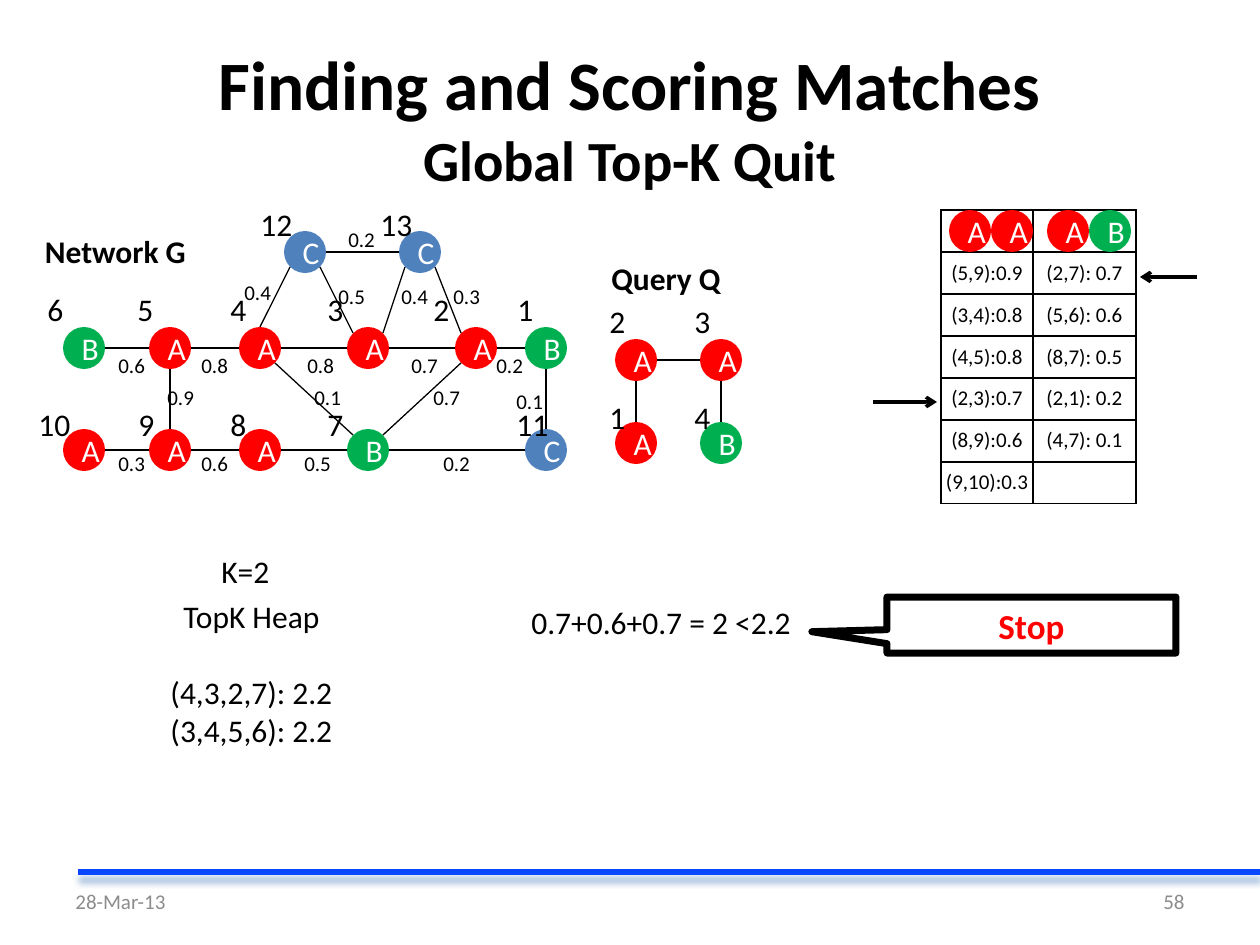
from lxml.etree import SubElement
from pptx import Presentation
from pptx.dml.color import RGBColor
from pptx.enum.shapes import MSO_CONNECTOR, MSO_SHAPE
from pptx.enum.text import MSO_ANCHOR, PP_ALIGN
from pptx.oxml.ns import qn
from pptx.util import Emu, Pt

PX = 914400 / 126
DIAMETER = 42
COLORS = {"black": "000000", "white": "FFFFFF", "grey": "8C8C8C", "stop": "FF0000",
          "rule": "0846FF", "rule_shadow": "95B3D7",
          "A": "FF0000", "B": "00B050", "C": "4F81BD"}
CENTER, RIGHT = PP_ALIGN.CENTER, PP_ALIGN.RIGHT
MARGINS = ("margin_left", "margin_top", "margin_right", "margin_bottom")

# Where a line may touch a node, as offsets from its centre.
SITES = {"N": (0, -21), "S": (0, 21), "W": (-21, 0), "E": (21, 0),
         "NW": (-15, -15), "NE": (15, -15), "SW": (-15, 15), "SE": (15, 15)}

# Node: letter, centre x, centre y, label x, label y.
NETWORK_NODES = {
    "12": ("C", 285, 53, 228, 0), "13": ("C", 400, 53, 348, 0),
    "6": ("B", 64, 149, 15, 85), "5": ("A", 150, 149, 105, 85),
    "4": ("A", 240, 149, 198, 85), "3": ("A", 348, 149, 295, 85),
    "2": ("A", 456, 149, 401, 85), "1": ("B", 526, 149, 485, 85),
    "10": ("A", 64, 251, 6, 200), "9": ("A", 150, 251, 106, 200),
    "8": ("A", 240, 251, 198, 200), "7": ("B", 348, 251, 295, 200),
    "11": ("C", 526, 251, 484, 200),
}
# Edge: node, site, node, site, weight, weight x, weight y.
NETWORK_EDGES = [
    ("12", "E", "13", "W", "0.2", 316, 21),
    ("12", "SW", "4", "N", "0.4", 212, 74),
    ("12", "SE", "3", "NW", "0.5", 306, 78),
    ("13", "SW", "3", "NE", "0.4", 369, 78),
    ("13", "SE", "2", "NW", "0.3", 421, 78),
    ("6", "E", "5", "W", "0.6", 86, 147),
    ("5", "E", "4", "W", "0.8", 169, 147),
    ("4", "E", "3", "W", "0.8", 275, 147),
    ("3", "E", "2", "W", "0.7", 379, 147),
    ("2", "E", "1", "W", "0.2", 464, 147),
    ("5", "S", "9", "N", "0.9", 135, 179),
    ("4", "SE", "7", "NW", "0.1", 282, 179),
    ("2", "SW", "7", "NE", "0.7", 401, 179),
    ("1", "S", "11", "N", "0.1", 484, 183),
    ("10", "E", "9", "W", "0.3", 86, 245),
    ("9", "E", "8", "W", "0.6", 169, 245),
    ("8", "E", "7", "W", "0.5", 272, 245),
    ("7", "E", "11", "W", "0.2", 411, 245),
]
QUERY_NODES = {
    "2": ("A", 39, 107, 0, 43), "3": ("A", 124, 107, 85, 43),
    "1": ("A", 39, 190, 0, 139), "4": ("B", 124, 190, 85, 139),
}
QUERY_EDGES = [("2", "E", "3", "W", None, 0, 0), ("2", "S", "1", "N", None, 0, 0),
               ("3", "S", "4", "N", None, 0, 0)]
PAIR_SCORES = [("(5,9):0.9", "(2,7): 0.7"), ("(3,4):0.8", "(5,6): 0.6"),
               ("(4,5):0.8", "(8,7): 0.5"), ("(2,3):0.7", "(2,1): 0.2"),
               ("(8,9):0.6", "(4,7): 0.1"), ("(9,10):0.3", "")]


def px(*lengths):
    return [Emu(round(length * PX)) for length in lengths]


def rgb(name):
    return RGBColor.from_string(COLORS[name])


def write(paragraph, text, size, color="black", bold=False, align=None):
    run = paragraph.add_run()
    run.text = text
    formats = {"name": "Calibri", "size": Pt(size), "bold": bold}
    for attribute, value in formats.items():
        setattr(run.font, attribute, value)
    run.font.color.rgb = rgb(color)
    if align is not None:
        paragraph.alignment = align


def add_text(shapes, box, text, size, wrap=False, anchor=MSO_ANCHOR.TOP, **formats):
    frame = shapes.add_textbox(*px(*box)).text_frame
    frame.word_wrap = wrap
    frame.vertical_anchor = anchor
    write(frame.paragraphs[0], text, size, **formats)
    return frame


def add_line(shapes, start, end, width, color="black", arrow=False):
    line = shapes.add_connector(MSO_CONNECTOR.STRAIGHT, *px(*start, *end))
    line.line.width = Pt(width)
    line.line.color.rgb = rgb(color)
    if arrow:
        SubElement(line.line._get_or_add_ln(), qn("a:tailEnd"), type="arrow")
    effects = SubElement(line._element.spPr, qn("a:effectLst"))
    return effects


def add_node(shapes, left, top, letter):
    node = shapes.add_shape(MSO_SHAPE.OVAL, *px(left, top, DIAMETER, DIAMETER))
    node.shadow.inherit = False
    node.fill.solid()
    node.fill.fore_color.rgb = rgb(letter)
    node.line.fill.background()
    node.text_frame.vertical_anchor = MSO_ANCHOR.MIDDLE
    write(node.text_frame.paragraphs[0], letter, 18, "white", align=CENTER)


def add_graph(slide, left, top, nodes, edges, title, title_box):
    """Groups nodes, edges, numbers and weights, placed from the given corner."""
    shapes = slide.shapes.add_group_shape().shapes

    def site_point(name, site):
        _, x, y, _, _ = nodes[name]
        dx, dy = SITES[site]
        return left + x + dx, top + y + dy

    for letter, x, y, _, _ in nodes.values():
        add_node(shapes, left + x - DIAMETER // 2, top + y - DIAMETER // 2, letter)
    for first, first_site, second, second_site, weight, x, y in edges:
        add_line(shapes, site_point(first, first_site), site_point(second, second_site), 0.75)
        if weight:
            add_text(shapes, (left + x, top + y, 53, 38), weight, 12)
    for name, (_, _, _, x, y) in nodes.items():
        add_text(shapes, (left + x, top + y, 58 if len(name) > 1 else 42, 50), name, 18)
    x, y, width, height = title_box
    add_text(shapes, (left + x, top + y, width, height), title, 18,
             wrap=True, bold=True, align=CENTER)


def add_cell_borders(cell):
    properties = cell._tc.get_or_add_tcPr()
    for position, side in enumerate(("lnL", "lnR", "lnT", "lnB")):
        border = properties.makeelement(qn("a:" + side), {"w": str(Pt(1))})
        fill = SubElement(border, qn("a:solidFill"))
        SubElement(fill, qn("a:srgbClr"), val=COLORS["black"])
        properties.insert(position, border)


def add_score_table(slide, left, top):
    """Pair scores under node headings, with the two cursor arrows."""
    widths, row_height = (92, 103), 42
    rows = [("", "")] + PAIR_SCORES
    table = slide.shapes.add_table(
        len(rows), 2, *px(left, top, sum(widths), row_height * len(rows))).table
    table.first_row = table.horz_banding = False
    for column, width in zip(table.columns, px(*widths)):
        column.width = width
    for row, texts in zip(table.rows, rows):
        row.height = px(row_height)[0]
        for cell, text in zip(row.cells, texts):
            for margin in MARGINS:
                setattr(cell, margin, 0)
            cell.vertical_anchor = MSO_ANCHOR.MIDDLE
            cell.fill.background()
            add_cell_borders(cell)
            paragraph = cell.text_frame.paragraphs[0]
            paragraph.font.size = Pt(12)
            if text:
                write(paragraph, text, 12, align=CENTER)
    heading = slide.shapes.add_group_shape().shapes
    for letter, x in zip("AAAB", (8, 50, 106, 148)):
        add_node(heading, left + x, top, letter)
    add_line(slide.shapes, (left - 68, top + 192), (left - 4, top + 192), 2, arrow=True)
    add_line(slide.shapes, (left + 256, top + 67), (left + 199, top + 67), 2, arrow=True)


def add_title(slide, box):
    frame = add_text(slide.shapes, box, "Finding and Scoring Matches", 39.6, wrap=True,
                     anchor=MSO_ANCHOR.MIDDLE, bold=True, align=CENTER)
    paragraph = frame.paragraphs[0]
    paragraph.add_line_break()
    write(paragraph, "Global Top-K Quit", 32.4, bold=True)


def add_heap(slide, left, top):
    add_text(slide.shapes, (left + 52, top, 74, 50), "K=2", 18)
    frame = add_text(slide.shapes, (left, top + 45, 189, 165), "TopK Heap", 18, align=CENTER)
    for text, gap in (("(4,3,2,7): 2.2", 22), ("(3,4,5,6): 2.2", 0)):
        paragraph = frame.add_paragraph()
        paragraph.space_before = Pt(gap)
        write(paragraph, text, 18, align=CENTER)


def add_stop_test(slide, left, top):
    add_text(slide.shapes, (left, top, 287, 50), "0.7+0.6+0.7 = 2 <2.2", 18)
    callout = slide.shapes.add_shape(
        MSO_SHAPE.RECTANGULAR_CALLOUT, *px(left + 368, top, 289, 56))
    callout.adjustments[0], callout.adjustments[1] = -0.76, 0.12
    callout.shadow.inherit = False
    callout.fill.background()
    callout.line.color.rgb = rgb("black")
    callout.line.width = Pt(4)
    callout.text_frame.vertical_anchor = MSO_ANCHOR.MIDDLE
    write(callout.text_frame.paragraphs[0], "Stop", 20, "stop", bold=True, align=CENTER)


def add_footer(slide, top):
    effects = add_line(slide.shapes, (78, top), (1260, top), 3, "rule")
    shadow = SubElement(effects, qn("a:outerShdw"), blurRad=str(Pt(4)), dist=str(Pt(4)),
                        dir="5400000", algn="t", rotWithShape="0")
    SubElement(shadow, qn("a:srgbClr"), val=COLORS["rule_shadow"])
    for left, text, align in ((63, "28-Mar-13", None), (903, "58", RIGHT)):
        add_text(slide.shapes, (left, top + 4, 294, 50), text, 12, wrap=True,
                 anchor=MSO_ANCHOR.MIDDLE, color="grey", align=align)


def main():
    presentation = Presentation()
    presentation.slide_width, presentation.slide_height = px(1260, 945)
    slide = presentation.slides.add_slide(presentation.slide_layouts[6])
    add_footer(slide, 872)
    add_title(slide, (63, 38, 1134, 158))
    add_heap(slide, 157, 546)
    add_stop_test(slide, 519, 597)
    add_graph(slide, 20, 199, NETWORK_NODES, NETWORK_EDGES, "Network G", (1, 27, 189, 50))
    add_graph(slide, 597, 253, QUERY_NODES, QUERY_EDGES, "Query Q", (1, 0, 136, 50))
    add_score_table(slide, 941, 210)
    presentation.save("out.pptx")


if __name__ == "__main__":
    main()
